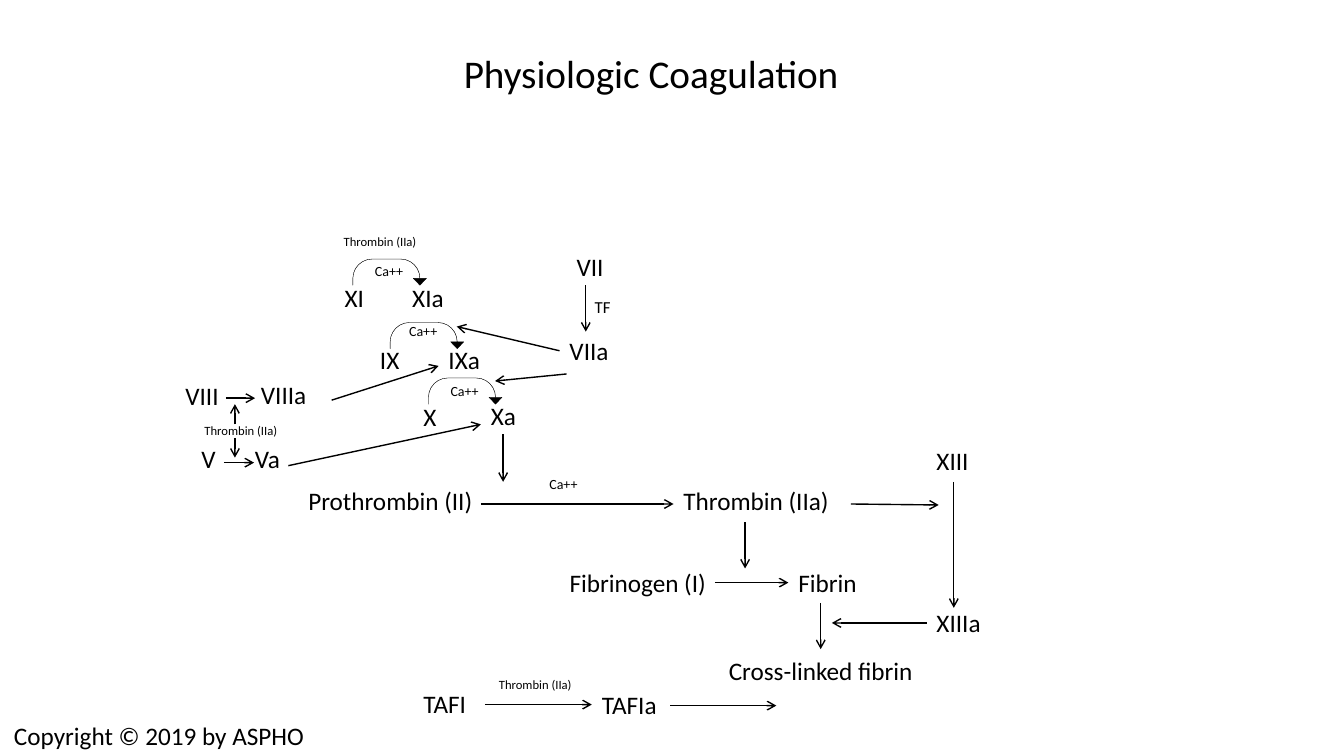
import pptx
import pptx.util
import pptx.dml.color
import pptx.enum.shapes
import pptx.enum.text
import pptx.oxml
from dataclasses import dataclass


@dataclass
class Theme:
    font: str = "Calibri"
    ink: str = "000000"
    title: int = 28
    body: int = 18
    tissue: int = 12
    ion: int = 10
    enzyme: int = 9
    stroke: float = 1
    hair: float = 0.25


LOOK = Theme()
WIDE, HIGH = 13.33, 7.5
CELL = 0.1  # grid step in inches
ROWS = {LOOK.body: 4, LOOK.tissue: 3, LOOK.ion: 2.7, LOOK.enzyme: 2.5}

# text, column, row, columns wide
FACTORS = [
    ("XI", 33.2, 27.5, 4.5), ("XIa", 39.9, 27.5, 5.8),
    ("IX", 36.7, 33.7, 4.5), ("IXa", 43.5, 33.7, 6.4),
    ("X", 41, 39.3, 3.1), ("Xa", 47.7, 39.2, 5.6),
    ("VIII", 17.4, 37.2, 6.6), ("VIIIa", 24.9, 37.1, 8.6),
    ("V", 19, 43.5, 3.3), ("Va", 24.3, 43.5, 7.2),
    ("VII", 56.2, 24.4, 5.4), ("VIIa", 55.5, 32.8, 7.4),
    ("Prothrombin (II)", 29.6, 47.7, 19.3),
    ("Thrombin (IIa)", 66.8, 47.7, 19.3),
    ("Fibrinogen (I)", 55.5, 55.8, 17.1), ("Fibrin", 78.2, 55.8, 10.9),
    ("XIII", 91.9, 43.7, 7.3), ("XIIIa", 91.9, 59.8, 7.7),
    ("Cross-linked fibrin", 71.3, 64.5, 29.5),
    ("TAFI", 41, 67.8, 7.6), ("TAFIa", 58.7, 67.9, 9.5),
    ("Copyright © 2019 by ASPHO", 0.4, 71, 31.1),
]

# text, size, column, row, columns wide
NOTES = [
    ("Ca++", LOOK.ion, 36.2, 25.6, 7.1),
    ("Ca++", LOOK.ion, 39.6, 31.5, 7),
    ("Ca++", LOOK.ion, 43.7, 37.5, 6.3),
    ("Ca++", LOOK.ion, 53.5, 46.7, 6.5),
    ("TF", LOOK.tissue, 58, 28.9, 5.2),
    ("Thrombin (IIa)", LOOK.enzyme, 33.1, 22.7, 11.9),
    ("Thrombin (IIa)", LOOK.enzyme, 19.3, 41.5, 11.6),
    ("Thrombin (IIa)", LOOK.enzyme, 48.5, 66.7, 12.3),
]

TURNS = [(35, 25.7), (38.7, 32), (42.5, 37.5)]

# start column and row, end column and row
ARROWS = [
    (22.4, 39.5, 25.3, 39.5), (32.9, 39.7, 43.5, 36.3),
    (22.2, 45.9, 25.2, 45.9), (28.6, 46.2, 47.7, 42.1),
    (23.3, 42.1, 23.3, 40.1), (23.3, 43.5, 23.3, 45.4),
    (58.1, 28.3, 58.1, 32.9), (56.2, 37.1, 49.1, 37.8),
    (49.9, 43.1, 49.9, 47.8), (47.7, 50, 66.8, 50),
    (73.9, 51.8, 73.9, 56.4), (84.4, 50, 93.1, 50.1),
    (94.6, 47.8, 94.6, 60.3), (81.4, 59.8, 81.4, 64.4),
    (66.5, 70, 77, 70),
]

# factor whose left side is joined, free column and row
FROM_LEFT = [("VIIa", 45.3, 32.4), ("XIIIa", 82.5, 61.8)]
TO_LEFT = [("Fibrin", 70.9, 57.8), ("TAFIa", 48.1, 69.9)]


def grid(*cells):
    return [pptx.util.Inches(cell * CELL) for cell in cells]


def ink():
    return pptx.dml.color.RGBColor.from_string(LOOK.ink)


def write(frame, text, size):
    frame.text = text
    frame.word_wrap = True
    font = frame.paragraphs[0].runs[0].font
    font.name = LOOK.font
    font.size = pptx.util.Pt(size)
    font.color.rgb = ink()


def label(slide, text, size, col, row, cols):
    box = slide.shapes.add_textbox(*grid(col, row, cols, ROWS[size]))
    write(box.text_frame, text, size)
    return box


def turn(slide, col, row):
    kind = pptx.enum.shapes.MSO_SHAPE.U_TURN_ARROW
    shape = slide.shapes.add_shape(kind, *grid(col, row, 7.3, 2.6))
    for spot, value in enumerate((0, 0.25, 0.262, 0.738, 1)):
        shape.adjustments[spot] = value
    shape.shadow.inherit = False
    shape.fill.solid()
    shape.fill.fore_color.rgb = ink()
    shape.line.color.rgb = ink()
    shape.line.width = pptx.util.Pt(LOOK.hair)


def arrow(slide, *ends):
    kind = pptx.enum.shapes.MSO_CONNECTOR.STRAIGHT
    line = slide.shapes.add_connector(kind, *grid(*ends))
    line.line.color.rgb = ink()
    line.line.width = pptx.util.Pt(LOOK.stroke)
    tip = pptx.oxml.parse_xml(
        '<a:tailEnd xmlns:a="http://schemas.openxmlformats.org/'
        'drawingml/2006/main" type="arrow"/>')
    line.line._get_or_add_ln().append(tip)
    flat = pptx.oxml.parse_xml(
        '<a:effectLst xmlns:a="http://schemas.openxmlformats.org/'
        'drawingml/2006/main"/>')
    line._element.spPr.append(flat)
    return line


def head(slide):
    title = slide.shapes.title
    title.left, title.top, title.width, title.height = grid(45, 4.2, 42.4, 6.6)
    frame = title.text_frame
    write(frame, "Physiologic Coagulation", LOOK.title)
    frame.vertical_anchor = pptx.enum.text.MSO_ANCHOR.MIDDLE
    line = frame.paragraphs[0]
    line.alignment = pptx.enum.text.PP_ALIGN.LEFT
    line.line_spacing = 0.9


def main():
    deck = pptx.Presentation()
    deck.slide_width = pptx.util.Inches(WIDE)
    deck.slide_height = pptx.util.Inches(HIGH)
    slide = deck.slides.add_slide(deck.slide_layouts[5])
    head(slide)
    for place in TURNS:
        turn(slide, *place)
    boxes = {text: label(slide, text, LOOK.body, *place)
             for text, *place in FACTORS}
    for note in NOTES:
        label(slide, *note)
    for ends in ARROWS:
        arrow(slide, *ends)
    for name, col, row in FROM_LEFT:
        arrow(slide, col, row, col, row).begin_connect(boxes[name], 1)
    for name, col, row in TO_LEFT:
        arrow(slide, col, row, col, row).end_connect(boxes[name], 1)
    deck.save("out.pptx")


if __name__ == "__main__":
    main()
